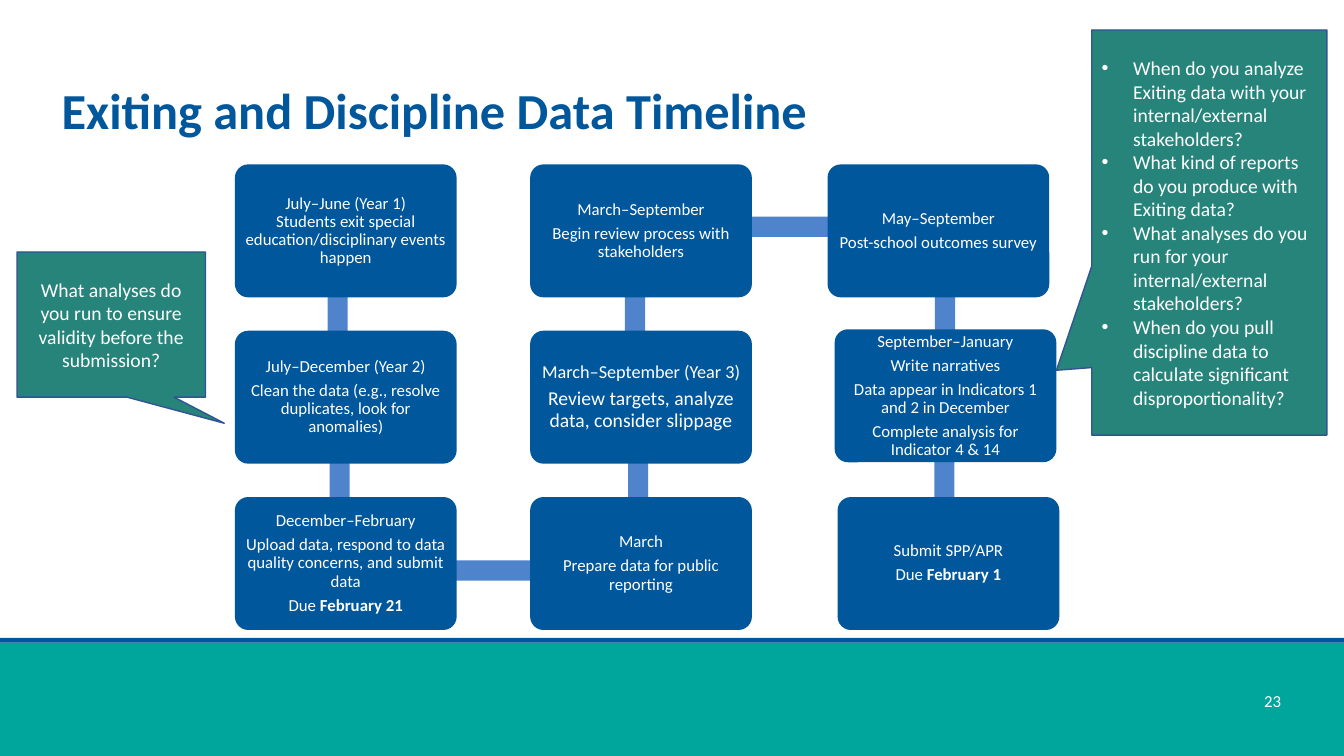
from lxml import etree
from pptx import Presentation
from pptx.dml.color import RGBColor
from pptx.enum.shapes import MSO_SHAPE
from pptx.enum.text import MSO_ANCHOR, PP_ALIGN
from pptx.oxml.ns import qn
from pptx.util import Pt

BLUE = RGBColor(0x01, 0x57, 0x9B)
LINK_BLUE = RGBColor(0x4F, 0x83, 0xCC)
TEAL = RGBColor(0x00, 0xA5, 0x9B)
CALLOUT_GREEN = RGBColor(0x26, 0x84, 0x7A)
CALLOUT_LINE = RGBColor(0x32, 0x54, 0x91)
WHITE = RGBColor(0xFF, 0xFF, 0xFF)

RECT = MSO_SHAPE.RECTANGLE
ROUNDED = MSO_SHAPE.ROUNDED_RECTANGLE
CALLOUT = MSO_SHAPE.RECTANGULAR_CALLOUT
LEFT, CENTER, RIGHT = PP_ALIGN.LEFT, PP_ALIGN.CENTER, PP_ALIGN.RIGHT
MIDDLE = MSO_ANCHOR.MIDDLE

FONT = "Calibri"
CARD_W, CARD_H = 158.4, 95
ROW_TOP, ROW_PITCH = 117.4, 118.8
LINK_THICK, LINK_LONG = 14.4, 118
BULLET_INDENT = 22.5

# Cards: left, row, offset from row top, text sizes (heading, body), paragraphs.
# A tuple paragraph is plain text followed by bold text.
CARDS = [
    (167.8, 0, 0, (12, 12), [
        "July–June (Year 1)\vStudents exit special education/disciplinary events happen"]),
    (167.8, 1, 0, (12, 12), [
        "July–December (Year 2)",
        "Clean the data (e.g., resolve duplicates, look for anomalies)"]),
    (167.8, 2, 0, (12, 12), [
        "December–February",
        "Upload data, respond to data quality concerns, and submit data",
        ("Due ", "February 21")]),
    (378.7, 2, 0, (12, 12), ["March", "Prepare data for public reporting"]),
    (378.7, 1, 0, (13, 14), [
        "March‒September (Year 3)",
        "Review targets, analyze data, consider slippage"]),
    (378.7, 0, 0, (12, 12), [
        "March–September", "Begin review process with stakeholders"]),
    (591.1, 0, 0, (12, 12), ["May–September", "Post-school outcomes survey"]),
    (596.2, 1, -1, (12, 12), [
        "September–January",
        "Write narratives",
        "Data appear in Indicators 1 and 2 in December",
        "Complete analysis for Indicator 4 & 14"]),
    (598.3, 2, 0, (12, 12), ["Submit SPP/APR", ("Due ", "February 1")]),
]

# Links: left and top of each bar
VERTICAL_LINKS = [(234, 144.7), (235.4, 260.6), (448.6, 260.6),
                  (446.4, 167.8), (667.8, 180.4), (667.4, 280)]
HORIZONTAL_LINKS = [(208.8, 400.3), (448.6, 154.8)]
HORIZONTAL_LONG = 211

STAKEHOLDER_QUESTIONS = [
    "When do you analyze Exiting data with your internal/external stakeholders?",
    "What kind of reports do you produce with Exiting data?",
    "What analyses do you run for your internal/external stakeholders?",
    "When do you pull discipline data to calculate significant disproportionality?",
]


def add_bullet(p):
    pPr = p._p.get_or_add_pPr()
    pPr.set("marL", str(Pt(BULLET_INDENT)))
    pPr.set("indent", str(-Pt(BULLET_INDENT)))
    etree.SubElement(pPr, qn("a:buFont")).set("typeface", "Arial")
    etree.SubElement(pPr, qn("a:buChar")).set("char", "•")


def write_text(tf, paragraphs, sizes=(12,), color=WHITE, bold=False, align=CENTER,
               inset=None, spacing=None, gap=0, bullets=False):
    """Fill tf; sizes holds the first paragraph's size and the size of the rest."""
    tf.word_wrap = True
    tf.vertical_anchor = MIDDLE
    if inset is not None:
        tf.margin_left = tf.margin_right = tf.margin_top = tf.margin_bottom = Pt(inset)
    for i, content in enumerate(paragraphs):
        p = tf.add_paragraph() if i else tf.paragraphs[0]
        size = sizes[-1] if i else sizes[0]
        p.alignment = align
        if spacing:
            p.line_spacing = spacing
        p.space_before = Pt(0)
        p.space_after = Pt(round(gap * size, 2))
        if bullets:
            add_bullet(p)
        parts = (content,) if isinstance(content, str) else content
        for k, part in enumerate(parts):
            for j, line in enumerate(part.split("\v")):
                if j:
                    p.add_line_break()
                r = p.add_run()
                r.text = line
                r.font.name = FONT
                r.font.size = Pt(size)
                r.font.bold = bold or k > 0
                r.font.color.rgb = color


def add_box(s, kind, left, top, width, height, fill, line=None, adjust=()):
    sp = s.shapes.add_shape(kind, Pt(left), Pt(top), Pt(width), Pt(height))
    sp.shadow.inherit = False
    sp.fill.solid()
    sp.fill.fore_color.rgb = fill
    if line:
        sp.line.color.rgb = line
        sp.line.width = Pt(1)
    else:
        sp.line.fill.background()
    for i, value in enumerate(adjust):
        sp.adjustments[i] = value
    return sp


def add_card(s, left, row, offset, sizes, paragraphs):
    top = ROW_TOP + row * ROW_PITCH + offset
    sp = add_box(s, ROUNDED, left, top, CARD_W, CARD_H, BLUE, adjust=[0.1])
    write_text(sp.text_frame, paragraphs, sizes, inset=3.6, spacing=0.9, gap=0.35)


def add_callout(s, left, top, width, height, tail, paragraphs, **fmt):
    sp = add_box(s, CALLOUT, left, top, width, height, CALLOUT_GREEN, CALLOUT_LINE, tail)
    write_text(sp.text_frame, paragraphs, sizes=(14,), **fmt)


def main():
    prs = Presentation()
    prs.slide_width, prs.slide_height = Pt(960), Pt(540)
    s = prs.slides.add_slide(prs.slide_layouts[5])

    # Footer band
    add_box(s, RECT, 0, 459, 960, 81, TEAL)
    add_box(s, RECT, 0, 455.6, 960, 3.4, BLUE)

    # Title
    title = s.shapes.title
    title.left, title.top, title.width, title.height = Pt(44), Pt(29), Pt(870.5), Pt(104.4)
    write_text(title.text_frame, ["Exiting and Discipline Data Timeline"], sizes=(36,),
               color=BLUE, bold=True, align=LEFT, inset=0, spacing=0.9)

    # Timeline: links behind cards
    for left, top in VERTICAL_LINKS:
        add_box(s, RECT, left, top, LINK_THICK, LINK_LONG, LINK_BLUE)
    for left, top in HORIZONTAL_LINKS:
        add_box(s, RECT, left, top, HORIZONTAL_LONG, LINK_THICK, LINK_BLUE)
    for card in CARDS:
        add_card(s, *card)

    # Slide number
    number = s.shapes.add_textbox(Pt(881.3), Pt(480.2), Pt(33.8), Pt(40.3))
    write_text(number.text_frame, ["23"], align=RIGHT, inset=0)

    # Question callouts
    add_callout(s, 12.2, 180, 134.6, 103.7, (0.6, 0.68),
                ["What analyses do you run to ensure validity before the submission?"])
    add_callout(s, 779.8, 21.4, 168, 289.4, (-0.65, 0.34),
                STAKEHOLDER_QUESTIONS, align=LEFT, bullets=True)

    prs.save("out.pptx")


if __name__ == "__main__":
    main()
